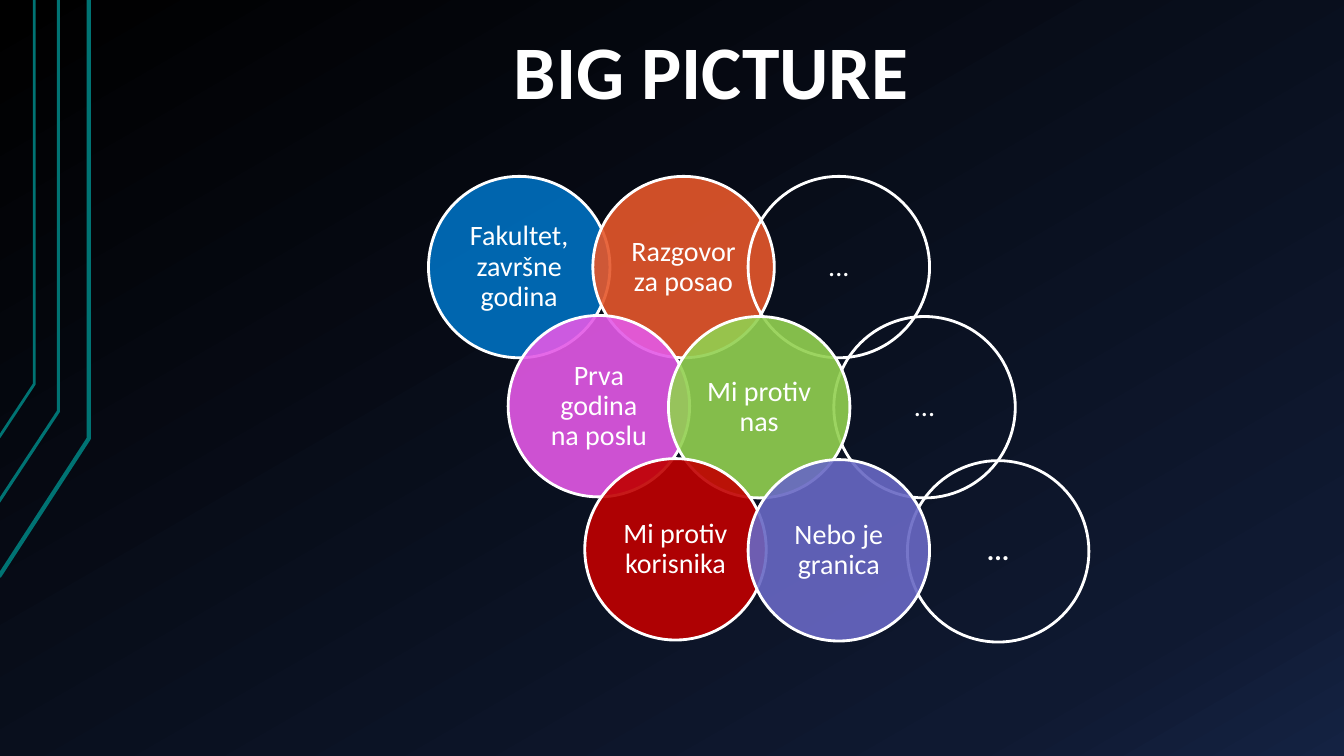
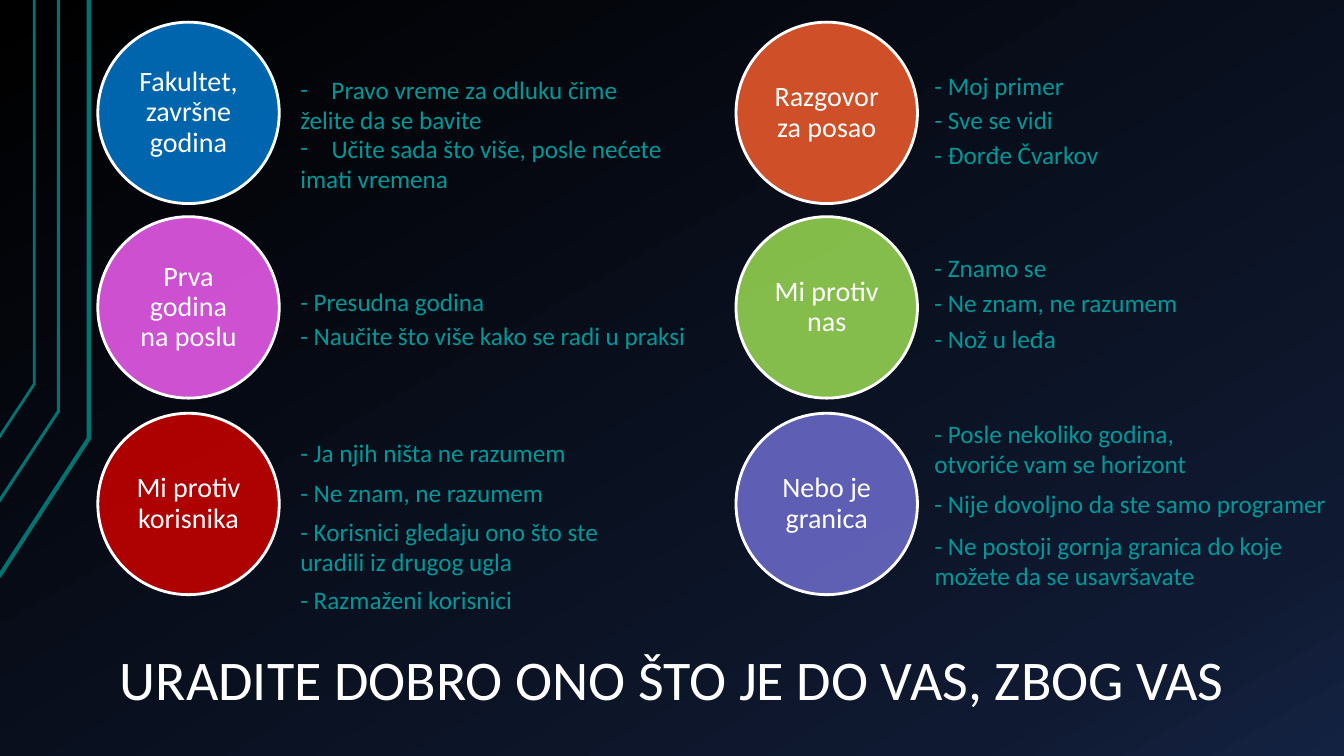
"""Build two career-stage slides: an overview and the notes for each stage."""
import copy

import lxml.etree
import pptx
import pptx.dml.color
import pptx.enum.shapes
import pptx.enum.text
import pptx.oxml.ns
import pptx.util

Inches = pptx.util.Inches
Pt = pptx.util.Pt
qn = pptx.oxml.ns.qn
hex_colour = pptx.dml.color.RGBColor.from_string
CENTER = pptx.enum.text.PP_ALIGN.CENTER
LEFT = pptx.enum.text.PP_ALIGN.LEFT
MIDDLE = pptx.enum.text.MSO_ANCHOR.MIDDLE
BOTTOM = pptx.enum.text.MSO_ANCHOR.BOTTOM
TOP = pptx.enum.text.MSO_ANCHOR.TOP

WHITE = "FFFFFF"
NOTE_TEAL = "009999"
TRACE_TEAL = "007373"
DIAMETER = 1.8

STYLES = {
    "title": {
        "colour": WHITE,
        "frame": {"vertical_anchor": BOTTOM, "margin_left": Inches(0.13), "margin_right": Inches(0.13),
                  "margin_top": Inches(0.07), "margin_bottom": Inches(0.07)},
        "paragraph": {"alignment": CENTER, "line_spacing": 0.9},
        "font": {"size": Pt(54), "bold": True},
    },
    "circle": {
        "colour": WHITE,
        "frame": {"vertical_anchor": MIDDLE, "margin_left": Inches(0.1), "margin_right": Inches(0.1),
                  "margin_top": Inches(0.03), "margin_bottom": Inches(0.03)},
        "paragraph": {"alignment": CENTER, "line_spacing": 0.9},
        "font": {"size": Pt(20)},
    },
    "note": {
        "colour": NOTE_TEAL,
        "frame": {"vertical_anchor": TOP},
        "paragraph": {"alignment": LEFT},
        "font": {"size": Pt(18)},
    },
    "closing": {
        "colour": WHITE,
        "frame": {"vertical_anchor": TOP},
        "paragraph": {"alignment": CENTER},
        "font": {"size": Pt(40)},
    },
}

STAGE_COLOURS = {
    "Fakultet, završne godina": "0070C0",
    "Razgovor za posao": "E5572B",
    "Prva godina na poslu": "E359E6",
    "Mi protiv nas": "92D050",
    "Mi protiv korisnika": "C00000",
    "Nebo je granica": "6868C4",
}


def write(shape, text, style):
    """Fill a shape with text in a named style."""
    frame = shape.text_frame
    frame.text = text
    frame.word_wrap = True
    for name, value in STYLES[style]["frame"].items():
        setattr(frame, name, value)
    for paragraph in frame.paragraphs:
        for name, value in STYLES[style]["paragraph"].items():
            setattr(paragraph, name, value)
        for run in paragraph.runs:
            run.font.name = "Calibri"
            run.font.color.rgb = hex_colour(STYLES[style]["colour"])
            for name, value in STYLES[style]["font"].items():
                setattr(run.font, name, value)


def add_circle(slide, left, top, label):
    """Add a stage circle, or an outlined one for a label without a colour."""
    circle = slide.shapes.add_shape(pptx.enum.shapes.MSO_SHAPE.OVAL, Inches(left), Inches(top),
                                    Inches(DIAMETER), Inches(DIAMETER))
    circle.shadow.inherit = False
    if label in STAGE_COLOURS:
        circle.fill.solid()
        circle.fill.fore_color.rgb = hex_colour(STAGE_COLOURS[label])
        tint = circle.element.spPr.find(qn("a:solidFill")).find(qn("a:srgbClr"))
        lxml.etree.SubElement(tint, qn("a:alpha"), val="90000")
    else:
        circle.fill.background()
    circle.line.color.rgb = hex_colour(WHITE)
    circle.line.width = Pt(2)
    write(circle, label, "circle")
    return circle


deck = pptx.Presentation()
deck.slide_width = Inches(13.33)
deck.slide_height = Inches(7.5)

backdrop = deck.slide_master.background.fill
backdrop.gradient()
backdrop.gradient_angle = 300
stop_list = deck.slide_master.element.find(".//" + qn("a:gsLst"))
stop_list.append(copy.deepcopy(stop_list[-1]))
for stop, (position, colour) in zip(backdrop.gradient_stops,
                                    [(0, "000000"), (0.85, "0F1931"), (1, "142242")]):
    stop.position = position
    stop.color.rgb = hex_colour(colour)

traces = [
    ([(-0.01, 5.72), (0.88, 4.35), (0.88, 0)], 3),
    ([(-0.02, 4.99), (0.58, 4.08), (0.58, 0)], 2.25),
    ([(-0.01, 4.34), (0.34, 3.81), (0.34, 0)], 2),
]
overview, details = [deck.slides.add_slide(deck.slide_layouts[6]) for _ in range(2)]
for slide in (overview, details):
    for points, width in traces:
        start, *bends = [(Inches(x), Inches(y)) for x, y in points]
        outline = slide.shapes.build_freeform(*start)
        outline.add_line_segments(bends, close=False)
        trace = outline.convert_to_shape()
        trace.shadow.inherit = False
        trace.fill.background()
        trace.line.color.rgb = hex_colour(TRACE_TEAL)
        trace.line.width = Pt(width)

heading = overview.shapes.add_textbox(Inches(1.39), Inches(0.68), Inches(11.33), Inches(0.54))
write(heading, "BIG PICTURE", "title")

overview_circles = [
    (4.25, 1.75, "Fakultet, završne godina"),
    (5.88, 1.75, "Razgovor za posao"),
    (7.42, 1.75, "..."),
    (8.27, 3.14, "..."),
    (9, 4.57, "..."),
    (5.04, 3.13, "Prva godina na poslu"),
    (6.63, 3.14, "Mi protiv nas"),
    (5.8, 4.55, "Mi protiv korisnika"),
    (7.42, 4.56, "Nebo je granica"),
]
for left, top, label in overview_circles:
    circle = add_circle(overview, left, top, label)
    if (left, label) == (9, "..."):
        circle.text_frame.paragraphs[0].runs[0].font.bold = True

stage_notes = [
    [(0.69, 3.44, "Pravo vreme za odluku čime\nželite da se bavite"),
     (1.27, 3.89, "Učite sada što više, posle nećete\nimati vremena")],
    [(0.65, 1.5, "- Moj primer"),
     (0.99, 1.39, "- Sve se vidi"),
     (1.33, 1.9, "- Đorđe Čvarkov")],
    [(2.79, 2.05, "- Presudna godina"),
     (3.13, 4.23, "- Naučite što više kako se radi u praksi")],
    [(2.45, 1.33, "- Znamo se"),
     (2.8, 2.64, "- Ne znam, ne razumem"),
     (3.16, 1.42, "- Nož u leđa")],
    [(4.29, 2.87, "- Ja njih ništa ne razumem"),
     (4.69, 2.64, "- Ne znam, ne razumem"),
     (5.07, 3.4, "- Korisnici gledaju ono što ste\nuradili iz drugog ugla"),
     (5.75, 2.32, "- Razmaženi korisnici")],
    [(4.1, 2.73, "- Posle nekoliko godina,\notvoriće vam se horizont"),
     (4.8, 4.13, "- Nije dovoljno da ste samo programer"),
     (5.21, 3.75, "- Ne postoji gornja granica do koje\nmožete da se usavršavate")],
]
columns = [(0.97, 2.88), (7.3, 9.17)]
row_tops = [0.22, 2.15, 4.1]
for index, (label, notes) in enumerate(zip(STAGE_COLOURS, stage_notes)):
    row, column = divmod(index, 2)
    circle_left, note_left = columns[column]
    add_circle(details, circle_left, row_tops[row], label)
    for top, width, text in notes:
        height = 0.4 + 0.31 * text.count("\n")
        note = details.shapes.add_textbox(Inches(note_left), Inches(top), Inches(width), Inches(height))
        write(note, text, "note")
        if not text.startswith("-"):
            bulleted = note.text_frame.paragraphs[0].runs[0].font
            properties = note.element.find(".//" + qn("a:pPr"))
            properties.set("marL", str(Inches(0.31)))
            properties.set("indent", str(-Inches(0.31)))
            lxml.etree.SubElement(properties, qn("a:buFont"), typeface=bulleted.name)
            lxml.etree.SubElement(properties, qn("a:buChar"), char="-")

closing = details.shapes.add_textbox(Inches(1.03), Inches(6.35), Inches(11.27), Inches(0.77))
write(closing, "URADITE DOBRO ONO ŠTO JE DO VAS, ZBOG VAS", "closing")

deck.save("out.pptx")
